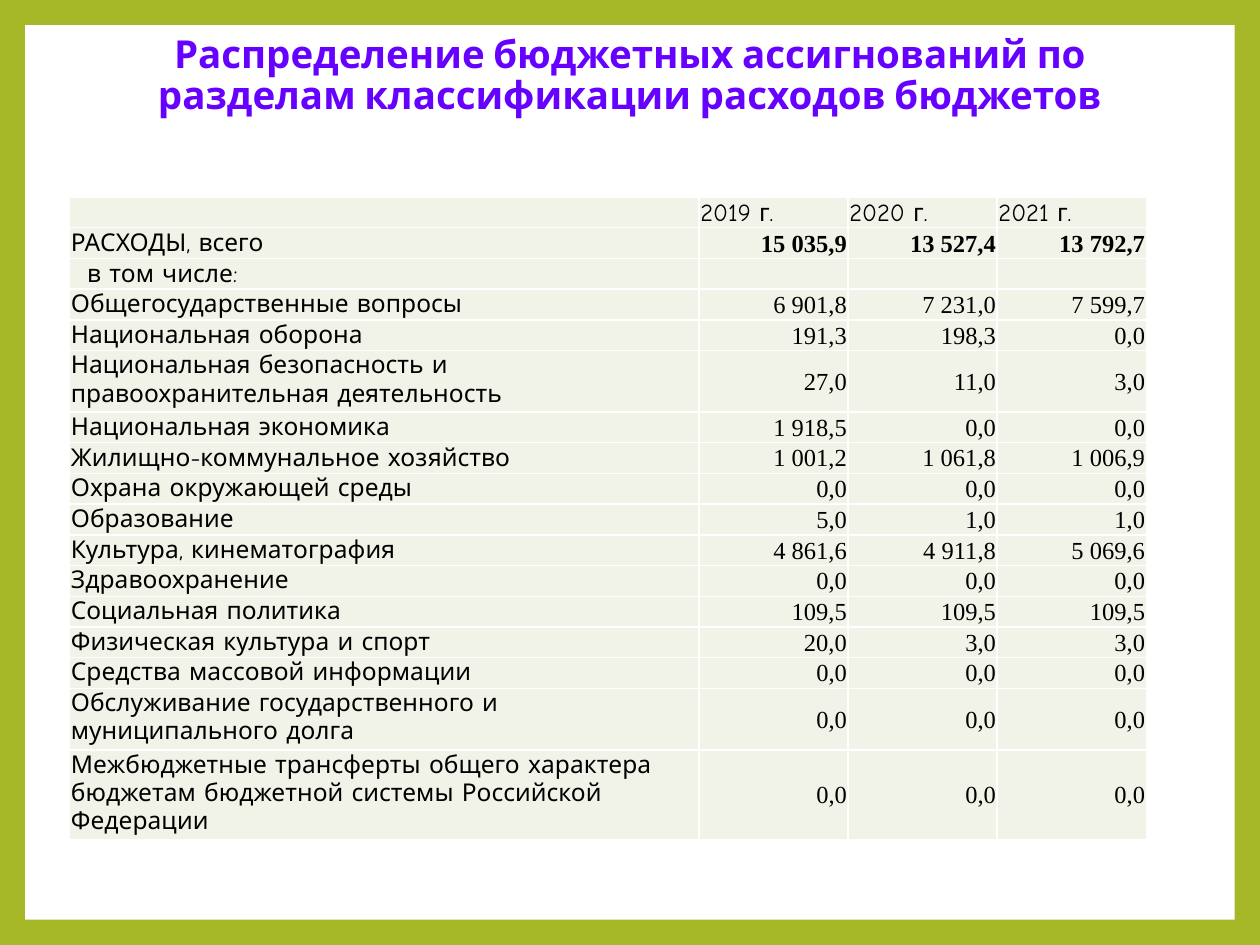
import pptx
import pptx.util
import pptx.dml.color
import pptx.enum.shapes
import pptx.enum.text
import pptx.oxml
import pptx.oxml.ns
from lxml import etree

Pt = pptx.util.Pt
RGBColor = pptx.dml.color.RGBColor
Align = pptx.enum.text.PP_ALIGN
Anchor = pptx.enum.text.MSO_ANCHOR
qn = pptx.oxml.ns.qn

GREEN = RGBColor(0xA6, 0xB7, 0x27)
WHITE = RGBColor(0xFF, 0xFF, 0xFF)
VIOLET = RGBColor(0x66, 0x00, 0xFF)
BLACK = RGBColor(0x00, 0x00, 0x00)
CELL = RGBColor(0xF1, 0xF3, 0xE8)
LABEL_FONT = "Comic Neue"
NUMBER_FONT = "Times New Roman"

TITLE = "Распределение бюджетных ассигнований по разделам классификации расходов бюджетов"
HEADER = ("", "2019 г.", "2020 г.", "2021 г.")
TOTAL = ("РАСХОДЫ, всего", "15 035,9", "13 527,4", "13 792,7")
INCLUDING = ("в том числе:", "", "", "")
SECTIONS = [
    ("Общегосударственные вопросы", "6 901,8", "7 231,0", "7 599,7"),
    ("Национальная оборона", "191,3", "198,3", "0,0"),
    ("Национальная безопасность и правоохранительная деятельность", "27,0", "11,0", "3,0"),
    ("Национальная экономика", "1 918,5", "0,0", "0,0"),
    ("Жилищно-коммунальное хозяйство", "1 001,2", "1 061,8", "1 006,9"),
    ("Охрана окружающей среды", "0,0", "0,0", "0,0"),
    ("Образование", "5,0", "1,0", "1,0"),
    ("Культура, кинематография", "4 861,6", "4 911,8", "5 069,6"),
    ("Здравоохранение", "0,0", "0,0", "0,0"),
    ("Социальная политика", "109,5", "109,5", "109,5"),
    ("Физическая культура и спорт", "20,0", "3,0", "3,0"),
    ("Средства массовой информации", "0,0", "0,0", "0,0"),
    ("Обслуживание государственного и муниципального долга", "0,0", "0,0", "0,0"),
    ("Межбюджетные трансферты общего характера бюджетам бюджетной системы "
     "Российской Федерации", "0,0", "0,0", "0,0"),
]
ROWS = [HEADER, TOTAL, INCLUDING] + SECTIONS
COLUMN_WIDTHS = (359.7, 85.2, 85.2, 85.2)
LINE_HEIGHT = 17.57
LINE_CHARACTERS = 45
INSET = 0.72
INDENT = 10


def write(frame, text, font=LABEL_FONT, size=14, color=BLACK, bold=False,
          align=Align.LEFT, spacing=None):
    para = frame.paragraphs[0]
    para.alignment = align
    if spacing:
        para.line_spacing = spacing
    if not text:
        etree.SubElement(para._p, qn("a:endParaRPr"), sz=str(size * 100))
        return
    span = para.add_run()
    span.text = text
    span.font.name = font
    span.font.size = Pt(size)
    span.font.bold = bold
    span.font.color.rgb = color


def style_cell(cell, anchor, left):
    cell.vertical_anchor = anchor
    cell.margin_left = Pt(left)
    cell.margin_right = cell.margin_top = Pt(INSET)
    cell.margin_bottom = 0
    cell.fill.solid()
    cell.fill.fore_color.rgb = CELL
    properties = cell._tc.get_or_add_tcPr()
    for place, side in enumerate(("lnL", "lnR", "lnT", "lnB")):
        line = etree.Element(qn("a:" + side), w=str(Pt(1)))
        fill = etree.SubElement(line, qn("a:solidFill"))
        etree.SubElement(fill, qn("a:srgbClr"), val=str(WHITE))
        properties.insert(place, line)


def add_budget_table(page):
    line_counts = [-(-len(row[0]) // LINE_CHARACTERS) or 1 for row in ROWS]
    frame = page.shapes.add_table(
        len(ROWS), len(COLUMN_WIDTHS), Pt(39.8), Pt(112.6),
        Pt(sum(COLUMN_WIDTHS)), Pt(LINE_HEIGHT * sum(line_counts)))
    table = frame.table
    table.first_row = False
    table.horz_banding = False
    for column, width in zip(table.columns, COLUMN_WIDTHS):
        column.width = Pt(width)
    for row_index, row in enumerate(ROWS):
        table.rows[row_index].height = Pt(LINE_HEIGHT * line_counts[row_index])
        for column_index, text in enumerate(row):
            cell = table.cell(row_index, column_index)
            is_label = column_index == 0
            is_number = not is_label and row is not HEADER
            anchor = Anchor.MIDDLE
            if row is HEADER:
                anchor = Anchor.BOTTOM
            elif is_label and row in SECTIONS:
                anchor = Anchor.TOP
            style_cell(cell, anchor, INDENT if is_label and row is INCLUDING else INSET)
            write(cell.text_frame, text,
                  font=NUMBER_FONT if is_number else LABEL_FONT,
                  bold=is_number and row is TOTAL,
                  align=Align.RIGHT if is_number else Align.LEFT)


def main():
    deck = pptx.Presentation()
    deck.slide_width, deck.slide_height = Pt(720), Pt(540)
    page = deck.slides.add_slide(deck.slide_layouts[6])
    page.background.fill.solid()
    page.background.fill.fore_color.rgb = GREEN

    panel = page.shapes.add_shape(pptx.enum.shapes.MSO_SHAPE.RECTANGLE,
                                  Pt(14.4), Pt(14.4), Pt(691.2), Pt(511.2))
    panel.shadow.inherit = False
    panel.fill.solid()
    panel.fill.fore_color.rgb = WHITE
    panel.line.fill.background()

    box = page.shapes.add_textbox(Pt(36), Pt(9.4), Pt(648), Pt(68.4))
    box.text_frame.word_wrap = True
    box.text_frame.vertical_anchor = Anchor.MIDDLE
    write(box.text_frame, TITLE, font="Cabin", size=22, color=VIOLET, bold=True,
          align=Align.CENTER, spacing=0.9)

    add_budget_table(page)
    deck.save("out.pptx")


if __name__ == "__main__":
    main()
